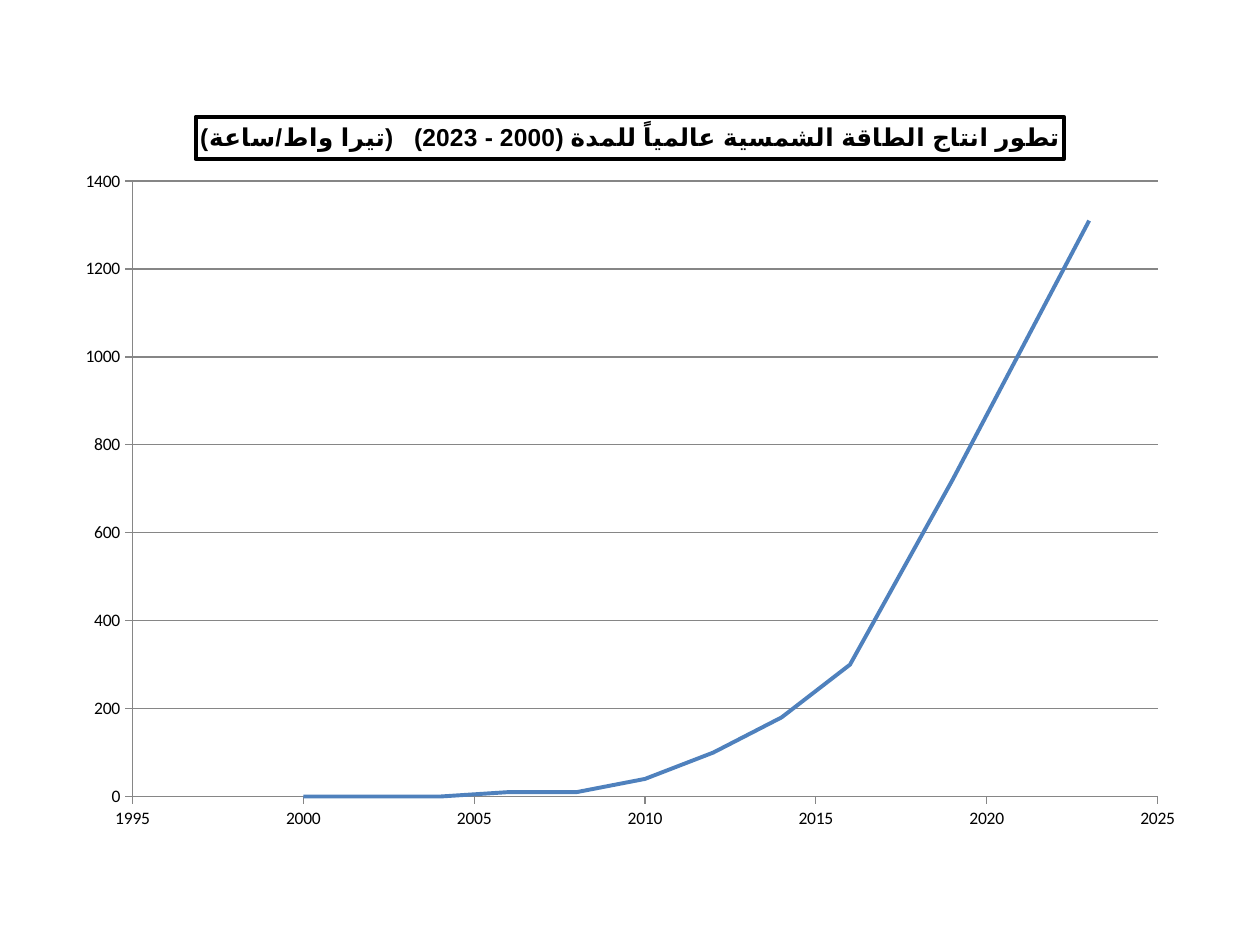
from lxml import etree
from pptx import Presentation
from pptx import util as u
from pptx.chart import data as chart_data
from pptx.dml.color import RGBColor
from pptx.enum import chart as chart_enum
from pptx.oxml import ns

PX = 9525  # EMU in one px, 96 px to the inch
COLORS = {"text": "000000", "line": "4F81BD", "axis": "868686"}
FONT = "Calibri"
TITLE = "تطور انتاج الطاقة الشمسية عالمياً للمدة (2000 - 2023)   (تيرا واط/ساعة)"
OUTPUT = {
    2000: 0, 2002: 0, 2004: 0, 2006: 10, 2008: 10, 2010: 40, 2012: 100,
    2014: 180, 2016: 300, 2018: 580, 2019: 720, 2023: 1310,
}


def color(name):
    return RGBColor.from_string(COLORS[name])


def style_line(line, name, width):
    line.color.rgb = color(name)
    line.width = u.Pt(width)


def set_layout(parent, after, chart_size, **box):
    """Place a chart part by px lengths x, y, w and h inside the chart."""
    for old in parent.findall(ns.qn("c:layout")):
        parent.remove(old)
    width, height = chart_size
    settings = {"layoutTarget": "inner"} if "w" in box else {}
    settings.update(xMode="edge", yMode="edge")
    for key, length in box.items():
        settings[key] = length / (width if key in "xw" else height)
    layout = etree.Element(ns.qn("c:layout"))
    manual = etree.SubElement(layout, ns.qn("c:manualLayout"))
    for key, value in settings.items():
        etree.SubElement(manual, ns.qn(f"c:{key}")).set("val", str(value))
    position = 0 if after is None else parent.index(after) + 1
    parent.insert(position, layout)


def style_title(chart, chart_size):
    chart.has_title = True
    title = chart.chart_title
    title.include_in_layout = False
    paragraph = title.text_frame.paragraphs[0]
    run = paragraph.add_run()
    run.text = TITLE
    run.font.name = FONT
    run.font.size = u.Pt(14)
    run.font.bold = True
    run.font.color.rgb = color("text")
    # Right-to-left reading and the font for Arabic script
    paragraph._p.get_or_add_pPr().set("rtl", "1")
    properties = run._r.get_or_add_rPr()
    etree.SubElement(properties, ns.qn("a:cs")).set("typeface", "Arial")
    style_line(title.format.line, "text", 2.25)
    element = title._element
    set_layout(element, element.find(ns.qn("c:tx")), chart_size, x=101, y=16)


def style_axis(axis, low, high, step, grid):
    axis.minimum_scale, axis.maximum_scale, axis.major_unit = low, high, step
    axis.major_tick_mark = chart_enum.XL_TICK_MARK.OUTSIDE
    axis.minor_tick_mark = chart_enum.XL_TICK_MARK.NONE
    axis.tick_labels.number_format = "General"
    axis.tick_labels.number_format_is_linked = False
    axis.has_major_gridlines = grid
    style_line(axis.format.line, "axis", 0.75)
    if grid:
        style_line(axis.major_gridlines.format.line, "axis", 0.75)


def add_output_chart(slide, left, top, width, height):
    data = chart_data.XyChartData()
    points = data.add_series("Series 1")
    for year, value in OUTPUT.items():
        points.add_data_point(year, value)
    chart = slide.shapes.add_chart(
        chart_enum.XL_CHART_TYPE.XY_SCATTER_LINES_NO_MARKERS,
        *(side * PX for side in (left, top, width, height)), data,
    ).chart
    chart.has_legend = False
    chart.font.name = FONT
    chart.font.size = u.Pt(10)
    chart.font.color.rgb = color("text")
    style_title(chart, (width, height))

    # Axes
    style_axis(chart.category_axis, 1995, 2025, 5, grid=False)
    style_axis(chart.value_axis, 0, 1400, 200, grid=True)

    # Curve
    plot = chart.plots[0]
    plot.vary_by_categories = False
    series = plot.series[0]
    series.smooth = False
    series.marker.style = chart_enum.XL_MARKER_STYLE.NONE
    style_line(series.format.line, "line", 2.25)

    plot_area = chart._chartSpace.find(".//" + ns.qn("c:plotArea"))
    set_layout(plot_area, None, (width, height), x=53, y=65, w=781, h=469)


def main():
    presentation = Presentation()
    presentation.slide_width = 960 * PX
    presentation.slide_height = 720 * PX
    slide = presentation.slides.add_slide(presentation.slide_layouts[6])
    add_output_chart(slide, 48, 73, 864, 570)
    presentation.save("out.pptx")


if __name__ == "__main__":
    main()
